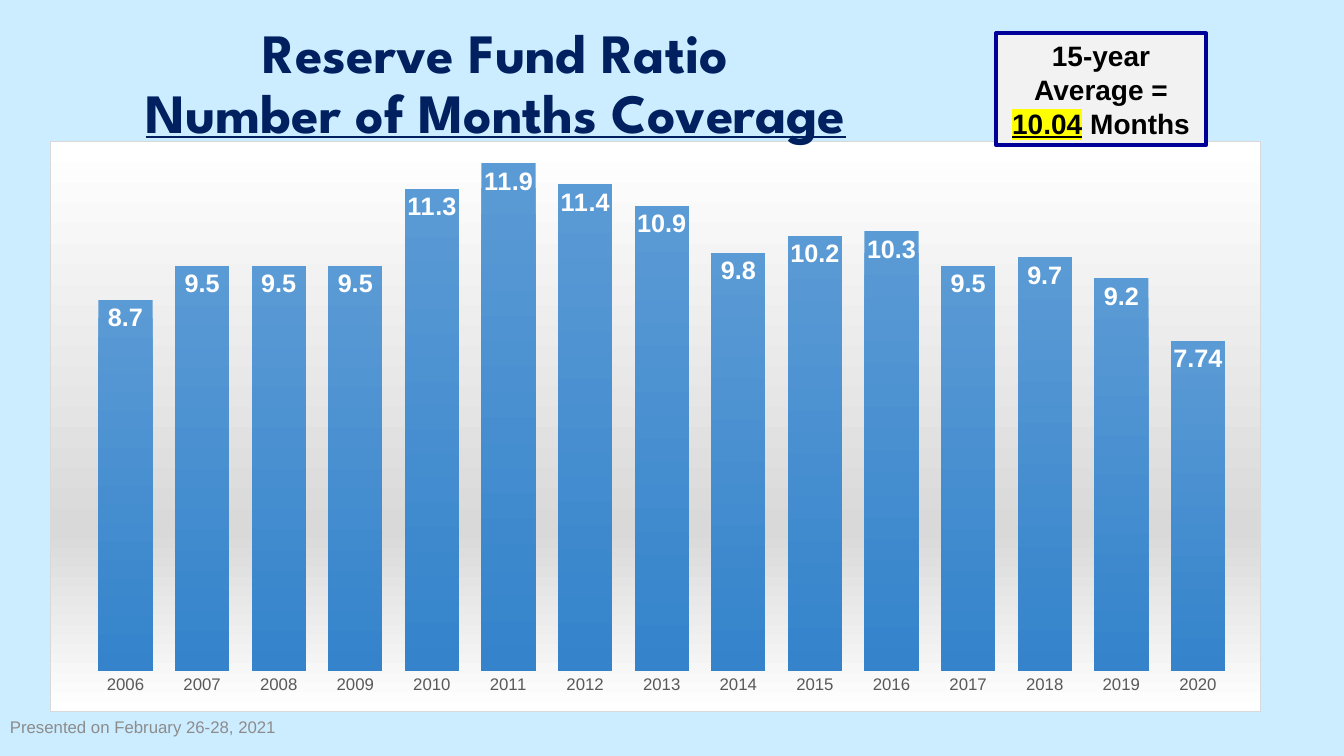
import lxml.etree
import pptx
import pptx.chart.data
import pptx.dml.color
import pptx.enum.chart
import pptx.enum.shapes
import pptx.enum.text
import pptx.oxml
import pptx.oxml.ns
import pptx.util

Cm, Pt = pptx.util.Cm, pptx.util.Pt
qn = pptx.oxml.ns.qn
PP_ALIGN = pptx.enum.text.PP_ALIGN
ANCHOR = pptx.enum.text.MSO_ANCHOR

COVERAGE = {
    "2006": 8.7, "2007": 9.5, "2008": 9.5, "2009": 9.5, "2010": 11.3,
    "2011": 11.9, "2012": 11.4, "2013": 10.9, "2014": 9.8, "2015": 10.2,
    "2016": 10.3, "2017": 9.5, "2018": 9.7, "2019": 9.2, "2020": 7.74,
}


def color(value):
    return pptx.dml.color.RGBColor.from_string(value)


def apply(target, settings):
    for name, value in settings.items():
        setattr(target, name, value)


def style_font(font, size, ink, **settings):
    font.color.rgb = color(ink)
    apply(font, {"name": "Arial", "size": Pt(size), **settings})


def add_run(paragraph, wording, size, ink, **settings):
    run = paragraph.add_run()
    run.text = wording
    style_font(run.font, size, ink, **settings)
    return run


def gradient(stops):
    """Return a top-to-bottom gradient fill from (percent, colour) pairs."""
    marks = "".join(
        f'<a:gs pos="{percent * 1000}"><a:srgbClr val="{ink}"/></a:gs>'
        for percent, ink in stops)
    return pptx.oxml.parse_xml(
        f'<a:gradFill {pptx.oxml.ns.nsdecls("a")} rotWithShape="1"><a:gsLst>{marks}</a:gsLst>'
        '<a:lin ang="5400000" scaled="0"/></a:gradFill>')


def fill_chart_area(chart):
    panel = pptx.oxml.parse_xml(
        f'<c:spPr {pptx.oxml.ns.nsdecls("c", "a")}><a:ln w="9525"><a:solidFill>'
        '<a:srgbClr val="D9D9D9"/></a:solidFill></a:ln></c:spPr>')
    panel.insert(0, gradient([(0, "FFFFFF"), (68, "D9D9D9"), (100, "FFFFFF")]))
    chart._chartSpace.find(qn("c:chart")).addnext(panel)


def place_plot(chart, x, y, w, h):
    """Fix the inner plot area, in fractions of the chart."""
    plot_area = chart._chartSpace.find(qn("c:chart")).find(qn("c:plotArea"))
    for former in plot_area.findall(qn("c:layout")):
        plot_area.remove(former)
    layout = lxml.etree.Element(qn("c:layout"))
    manual = lxml.etree.SubElement(layout, qn("c:manualLayout"))
    values = {"layoutTarget": "inner", "xMode": "edge", "yMode": "edge",
              "x": x, "y": y, "w": w, "h": h}
    for name, value in values.items():
        lxml.etree.SubElement(manual, qn(f"c:{name}")).set("val", str(value))
    plot_area.insert(0, layout)


def add_coverage_chart(slide, left, top, width, height):
    coverage = pptx.chart.data.CategoryChartData()
    coverage.categories = list(COVERAGE)
    coverage.add_series("Series 1", list(COVERAGE.values()))
    frame = slide.shapes.add_chart(
        pptx.enum.chart.XL_CHART_TYPE.COLUMN_CLUSTERED, left, top, width, height, coverage)
    chart = frame.chart
    apply(chart, {"has_title": False, "has_legend": False})
    style_font(chart.font, 10, "000000")
    fill_chart_area(chart)
    place_plot(chart, 0.03, 0.03, 0.95, 0.9)

    years, months = chart.category_axis, chart.value_axis
    no_tick = pptx.enum.chart.XL_TICK_MARK.NONE
    apply(years, {"major_tick_mark": no_tick, "has_major_gridlines": False})
    years.format.line.fill.background()
    style_font(years.tick_labels.font, 12, "595959")
    apply(months, {"minimum_scale": 0, "maximum_scale": 12,
                   "has_major_gridlines": False, "visible": False})

    columns = chart.plots[0]
    apply(columns, {"gap_width": 41, "vary_by_categories": False, "has_data_labels": True})
    columns.series[0]._element.get_or_add_spPr().append(
        gradient([(0, "5B9BD5"), (100, "3483CB")]))
    apply(columns.data_labels, {
        "show_value": True, "position": pptx.enum.chart.XL_LABEL_POSITION.INSIDE_END})
    style_font(columns.data_labels.font, 18, "FFFFFF", bold=True)
    return frame


def place_title(title, left, top, width, height):
    apply(title, {"left": left, "top": top, "width": width, "height": height})
    text = title.text_frame
    apply(text, {"word_wrap": True, "vertical_anchor": ANCHOR.BOTTOM,
                 "margin_bottom": Cm(1.1),
                 "auto_size": pptx.enum.text.MSO_AUTO_SIZE.NONE})
    heading = text.paragraphs[0]
    apply(heading, {"alignment": PP_ALIGN.CENTER, "line_spacing": 0.9})
    look = {"size": 39.6, "ink": "002060", "name": "League Spartan", "bold": True}
    add_run(heading, "Reserve Fund Ratio", **look)
    heading.add_line_break()
    add_run(heading, "Number of Months Coverage", underline=True, **look)


def add_average_badge(slide, left, top, width, height):
    badge = slide.shapes.add_shape(
        pptx.enum.shapes.MSO_SHAPE.RECTANGLE, left, top, width, height)
    badge.shadow.inherit = False
    badge.fill.solid()
    badge.fill.fore_color.rgb = color("F2F2F2")
    badge.line.color.rgb = color("000099")
    badge.line.width = Pt(3)
    apply(badge.text_frame, {"word_wrap": True, "vertical_anchor": ANCHOR.MIDDLE})
    average = badge.text_frame.paragraphs[0]
    average.alignment = PP_ALIGN.CENTER
    look = {"size": 20, "ink": "000000", "bold": True}
    add_run(average, "15-year Average = ", **look)
    figure = add_run(average, "10.04", underline=True, **look)
    add_run(average, " Months", **look)
    highlight = lxml.etree.Element(qn("a:highlight"))
    lxml.etree.SubElement(highlight, qn("a:srgbClr")).set("val", "FFFF00")
    figure._r.rPr.find(qn("a:solidFill")).addnext(highlight)


def add_date_note(slide, left, top, width, height):
    text = slide.shapes.add_textbox(left, top, width, height).text_frame
    apply(text, {"word_wrap": True, "vertical_anchor": ANCHOR.MIDDLE})
    add_run(text.paragraphs[0], "Presented on February 26-28, 2021", 12, "8C8C8C")


def build_reserve_slide(deck):
    slide = deck.slides.add_slide(deck.slide_layouts[5])
    slide.background.fill.solid()
    slide.background.fill.fore_color.rgb = color("CCECFF")
    title = slide.shapes.title
    chart_frame = add_coverage_chart(slide, Cm(1.27), Cm(3.56), Cm(30.5), Cm(14.38))
    title._element.addprevious(chart_frame._element)  # title overlaps the chart's top edge
    place_title(title, Cm(1.27), Cm(1.09), Cm(22.43), Cm(3.68))
    add_average_badge(slide, Cm(25.1), Cm(0.84), Cm(5.28), Cm(2.82))
    add_date_note(slide, Cm(0), Cm(17.81), Cm(7.62), Cm(1.02))


def main():
    deck = pptx.Presentation()
    apply(deck, {"slide_width": Cm(33.86), "slide_height": Cm(19.05)})
    build_reserve_slide(deck)
    deck.save("out.pptx")


if __name__ == "__main__":
    main()
